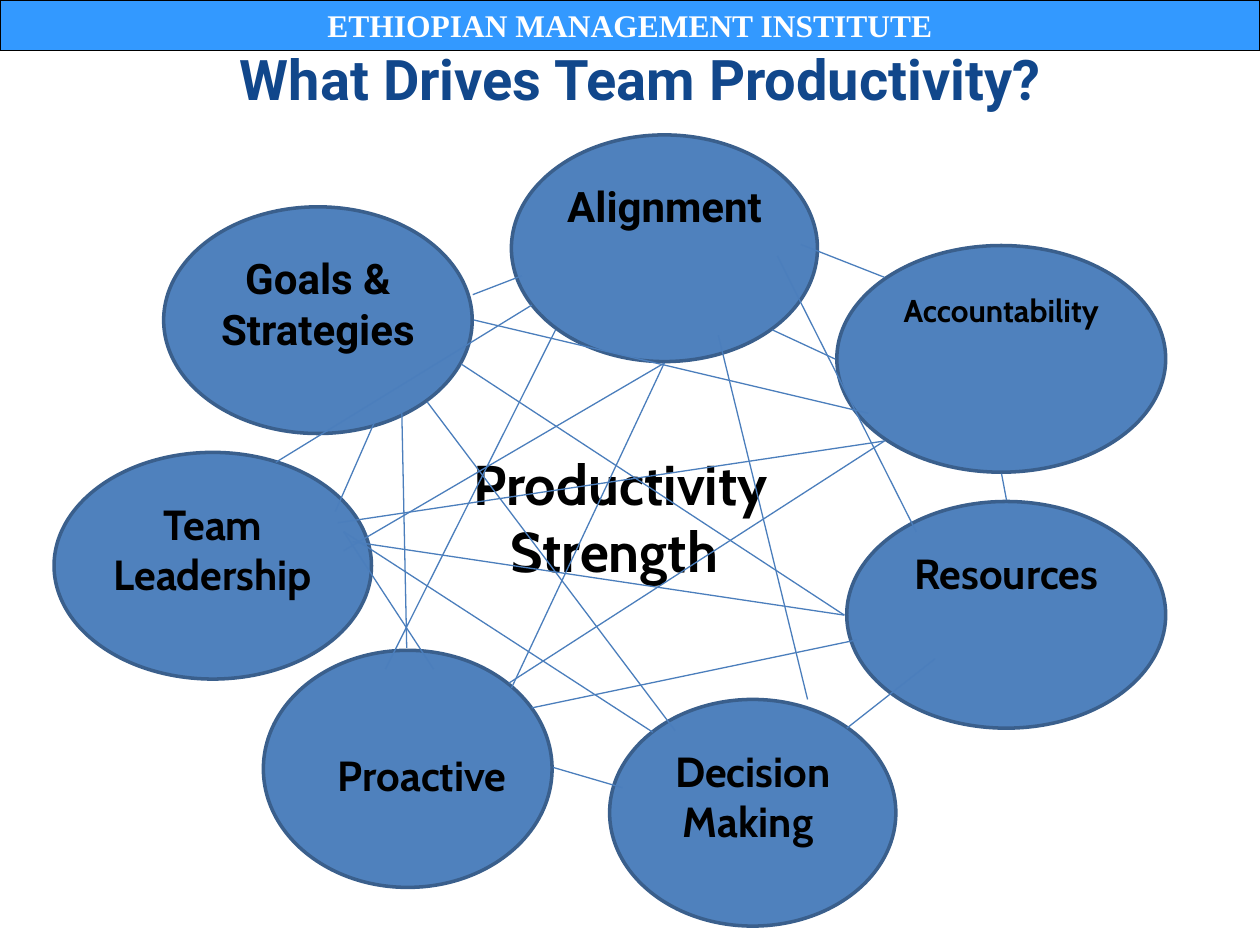
from lxml import etree
from pptx import Presentation
from pptx.dml.color import RGBColor
from pptx.enum import shapes, text
from pptx.oxml import ns
from pptx.util import Cm, Pt

BLACK = RGBColor(0x00, 0x00, 0x00)
WHITE = RGBColor(0xFF, 0xFF, 0xFF)
BANNER = RGBColor(0x33, 0x99, 0xFF)
TITLE = RGBColor(0x11, 0x47, 0x8B)
FILL = RGBColor(0x4F, 0x81, 0xBD)
OUTLINE = RGBColor(0x3A, 0x5F, 0x8C)
LINK = RGBColor(0x4B, 0x7E, 0xBC)

LABEL_TOP = 0.8
DRIVER_HEIGHT = 4.57

DRIVERS = [
    (["Goals &", "Strategies"], "Roboto", 24, 3.3, 4.17, 6.22),
    (["Alignment"], "Roboto", 24, 10.31, 2.72, 6.17),
    (["Accountability"], "Cabin", 18, 16.87, 4.95, 6.63),
    (["Resources"], "Cabin", 24, 17.07, 10.11, 6.43),
    (["Decision Making "], "Cabin", 24, 12.29, 14.1, 5.77),
    (["Proactive"], "Cabin", 24, 5.31, 13.11, 5.82, 4.78, 0.89, 1.88),
    (["Team Leadership"], "Cabin", 24, 1.09, 9.12, 6.4),
]

LINKS = [
    (10.52, 5.56, 9.53, 5.94),
    (10.72, 6.15, 5.56, 9.32),
    (11.2, 6.65, 7.77, 13.49),
    (15.57, 6.65, 16.84, 7.24),
    (14.48, 6.76, 16.28, 14.1),
    (13.39, 7.32, 10.31, 13.87),
    (7.54, 8.53, 6.76, 10.31),
    (8.1, 8.31, 8.2, 13.06),
    (8.61, 8.1, 13.61, 14.73),
    (9.3, 7.34, 17.02, 12.4),
    (9.55, 6.45, 17.5, 8.33),
    (6.93, 10.72, 8.74, 13.49),
    (6.93, 10.72, 13.16, 14.76),
    (7.11, 10.92, 17.02, 12.4),
    (6.81, 10.54, 17.83, 8.89),
    (15.67, 5.16, 18.47, 10.72),
    (6.93, 11.1, 13.39, 7.32),
    (11.15, 15.47, 12.55, 15.88),
    (10.72, 14.27, 17.27, 12.9),
    (10.26, 13.77, 17.83, 8.89),
    (17.07, 14.68, 18.85, 13.28),
    (20.29, 10.08, 20.19, 9.55),
    (17.83, 5.59, 16.15, 4.93),
]


def box(left, top, width, height):
    return Cm(left), Cm(top), Cm(width), Cm(height)


def write(sp, lines, font, size, color, anchor=text.MSO_ANCHOR.TOP):
    tf = sp.text_frame
    tf.word_wrap = True
    tf.vertical_anchor = anchor
    for i, line in enumerate(lines):
        p = tf.paragraphs[0] if i == 0 else tf.add_paragraph()
        p.text = line
        p.alignment = text.PP_ALIGN.CENTER
        p.font.name = font
        p.font.size = Pt(size)
        p.font.bold = True
        p.font.color.rgb = color


def add_shape(parent, kind, place, fill, line, weight):
    sp = parent.shapes.add_shape(kind, *place)
    sp.shadow.inherit = False
    sp.fill.solid()
    sp.fill.fore_color.rgb = fill
    sp.line.color.rgb = line
    sp.line.width = Pt(weight)
    return sp


def add_label(parent, place, *style):
    write(parent.shapes.add_textbox(*place), *style)


def add_driver(s, lines, font, size, left, top, width,
               height=DRIVER_HEIGHT, dx=None, dy=LABEL_TOP):
    group = s.shapes.add_group_shape()
    add_shape(group, shapes.MSO_SHAPE.OVAL, box(left, top, width, height),
              FILL, OUTLINE, 2)
    inset = 0.103 * width
    dx = inset if dx is None else dx
    label_height = 1.27 if len(" ".join(lines).split()) == 1 else 2.31
    add_label(group, box(left + dx, top + dy, width - 2 * inset, label_height),
              lines, font, size, BLACK)


def add_link(s, x1, y1, x2, y2):
    cx = s.shapes.add_connector(shapes.MSO_CONNECTOR.STRAIGHT,
                                Cm(x1), Cm(y1), Cm(x2), Cm(y2))
    cx.line.color.rgb = LINK
    cx.line.width = Pt(0.75)
    etree.SubElement(cx._element.spPr, ns.qn("a:effectLst"))


def main():
    prs = Presentation()
    prs.slide_width, prs.slide_height = Cm(25.4), Cm(19.05)
    s = prs.slides.add_slide(prs.slide_layouts[6])

    banner = add_shape(s, shapes.MSO_SHAPE.RECTANGLE, box(0, 0, 25.4, 1.02),
                       BANNER, BLACK, 0.75)
    write(banner, ["ETHIOPIAN MANAGEMENT INSTITUTE"], "Times New Roman", 18,
          WHITE, text.MSO_ANCHOR.MIDDLE)
    add_label(s, box(1.7, 0.84, 22.43, 1.47),
              ["What Drives Team Productivity?"], "Roboto", 32, TITLE,
              text.MSO_ANCHOR.MIDDLE)
    for driver in DRIVERS:
        add_driver(s, *driver)
    add_label(s, box(8.94, 8.94, 7.14, 3), ["Productivity Strength "],
              "Cabin", 32, BLACK)
    for link in LINKS:
        add_link(s, *link)

    prs.save("out.pptx")


if __name__ == "__main__":
    main()
